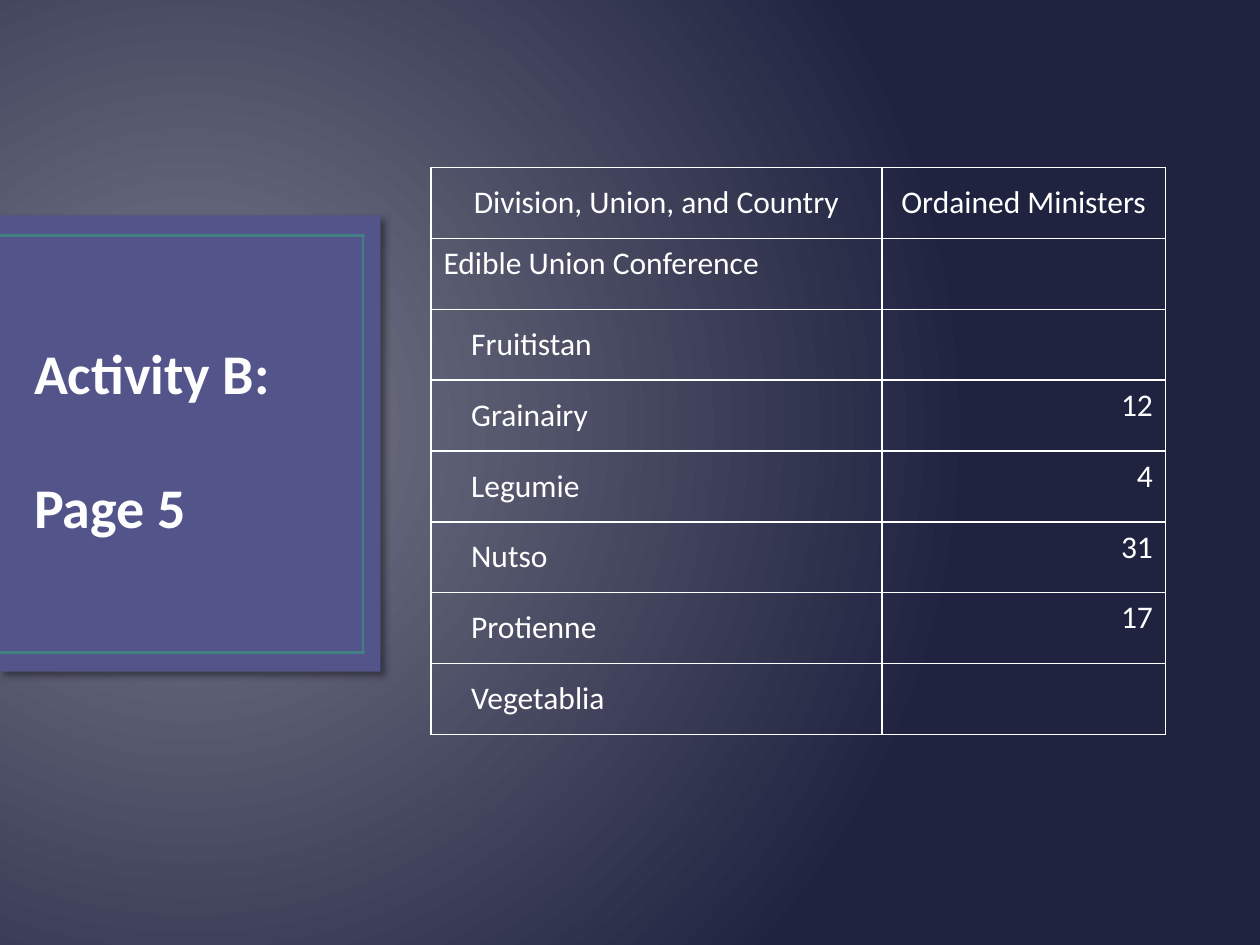
from pptx import Presentation
from pptx.dml.color import RGBColor
from pptx.enum import shapes, text
from pptx.oxml import parse_xml
from pptx.oxml.ns import nsdecls, qn
from pptx.util import Inches, Pt

TITLE = ["Activity B:", "Page 5"]
HEADERS = ["Division, Union, and Country", "Ordained Ministers"]
UNION = "Edible Union Conference"
COUNTRIES = [
    ("Fruitistan", ""),
    ("Grainairy", "12"),
    ("Legumie", "4"),
    ("Nutso", "31"),
    ("Protienne", "17"),
    ("Vegetablia", ""),
]
FRAME_LINES = [  # x1, y1, x2, y2
    (2.88, 1.87, 2.88, 5.17),
    (0, 1.87, 2.9, 1.87),
    (0, 5.18, 2.9, 5.18),
]
COLUMN_WIDTHS = [3.58, 2.25]
TABLE_HEIGHT = 4.5

FONT = "Calibri"
GLOW = RGBColor(0x7A, 0x7B, 0x8C)
NAVY = RGBColor(0x20, 0x23, 0x40)
PURPLE = RGBColor(0x53, 0x54, 0x8A)
TEAL = RGBColor(0x43, 0x80, 0x86)
TITLE_WHITE = RGBColor(0xFE, 0xFE, 0xFE)
WHITE = RGBColor(0xFF, 0xFF, 0xFF)

LEFT, CENTER, RIGHT = text.PP_ALIGN.LEFT, text.PP_ALIGN.CENTER, text.PP_ALIGN.RIGHT
TOP, MIDDLE = text.MSO_ANCHOR.TOP, text.MSO_ANCHOR.MIDDLE


def add_span(para, words, size, color, bold=False):
    span = para.add_run()
    span.text = words
    span.font.name = FONT
    span.font.size = Pt(size)
    span.font.bold = bold
    span.font.color.rgb = color
    return span


def paint_background(page):
    """Radial gradient centred at the left of the page."""
    fill = page.background.fill
    fill.gradient()
    for stop, color, position in zip(fill.gradient_stops, (GLOW, NAVY), (0, 1)):
        stop.color.rgb = color
        stop.position = position
    gradient = page.element.find(".//" + qn("a:gradFill"))
    gradient.replace(gradient.find(qn("a:lin")), parse_xml(
        f'<a:path {nsdecls("a")} path="circle">'
        '<a:fillToRect l="15000" t="50000" r="85000" b="60000"/></a:path>'))


def add_panel(page):
    panel = page.shapes.add_shape(shapes.MSO_SHAPE.RECTANGLE, Inches(0),
                                  Inches(1.71), Inches(3.02), Inches(3.62))
    panel.fill.solid()
    panel.fill.fore_color.rgb = PURPLE
    panel.line.fill.background()
    panel.element.spPr.append(parse_xml(
        f'<a:effectLst {nsdecls("a")}>'
        f'<a:outerShdw blurRad="{Pt(4)}" dist="{Pt(3)}" dir="2700000">'
        '<a:srgbClr val="000000"><a:alpha val="40000"/></a:srgbClr>'
        '</a:outerShdw></a:effectLst>'))
    for ends in FRAME_LINES:
        line = page.shapes.add_connector(shapes.MSO_CONNECTOR.STRAIGHT,
                                         *map(Inches, ends))
        line.line.color.rgb = TEAL
        line.line.width = Pt(1.5)
        line.element.spPr.append(parse_xml(f'<a:effectLst {nsdecls("a")}/>'))


def fill_title(page):
    title = page.shapes.title
    title.left, title.top = Inches(0.17), Inches(2.08)
    title.width, title.height = Inches(2.6), Inches(2.25)
    page.shapes.element.append(title.element)  # in front of the panel
    frame = title.text_frame
    frame.auto_size = text.MSO_AUTO_SIZE.NONE
    frame.vertical_anchor = text.MSO_ANCHOR.BOTTOM
    for index, words in enumerate(TITLE):
        para = frame.add_paragraph() if index else frame.paragraphs[0]
        para.alignment = LEFT
        para.space_before = Pt(38 if index else 0)
        span = add_span(para, words, 32, TITLE_WHITE, bold=True)
        span.font.element.set("spc", "20") if hasattr(span.font, "element") else None


def format_cell(cell, words, align, anchor, indent=0):
    properties = cell._tc.get_or_add_tcPr()
    for side in ("lnL", "lnR", "lnT", "lnB"):
        properties.append(parse_xml(
            f'<a:{side} {nsdecls("a")} w="{Pt(1)}"><a:solidFill>'
            f'<a:srgbClr val="{WHITE}"/></a:solidFill></a:{side}>'))
    cell.fill.background()
    cell.vertical_anchor = anchor
    cell.margin_left = Inches(0.1 + indent)
    para = cell.text_frame.paragraphs[0]
    para.alignment = align
    if words:
        add_span(para, words, 18, WHITE)


def add_ministers_table(page):
    rows = [HEADERS, (UNION, ""), *COUNTRIES]
    table = page.shapes.add_table(
        len(rows), len(COLUMN_WIDTHS), Inches(3.42), Inches(1.33),
        Inches(sum(COLUMN_WIDTHS)), Inches(TABLE_HEIGHT)).table
    table.first_row = table.horz_banding = False
    for column, width in zip(table.columns, COLUMN_WIDTHS):
        column.width = Inches(width)
    for index, (name, count) in enumerate(rows):
        place, ministers = table.cell(index, 0), table.cell(index, 1)
        if index == 0:
            format_cell(place, name, CENTER, MIDDLE)
            format_cell(ministers, count, CENTER, MIDDLE)
        else:
            is_union = name == UNION
            format_cell(place, name, LEFT, TOP if is_union else MIDDLE,
                        0 if is_union else 0.22)
            format_cell(ministers, count, RIGHT, TOP)


def main():
    deck = Presentation()
    deck.slide_width, deck.slide_height = Inches(10), Inches(7.5)
    page = deck.slides.add_slide(deck.slide_layouts[5])
    paint_background(page)
    add_panel(page)
    fill_title(page)
    add_ministers_table(page)
    deck.save("out.pptx")


if __name__ == "__main__":
    main()
